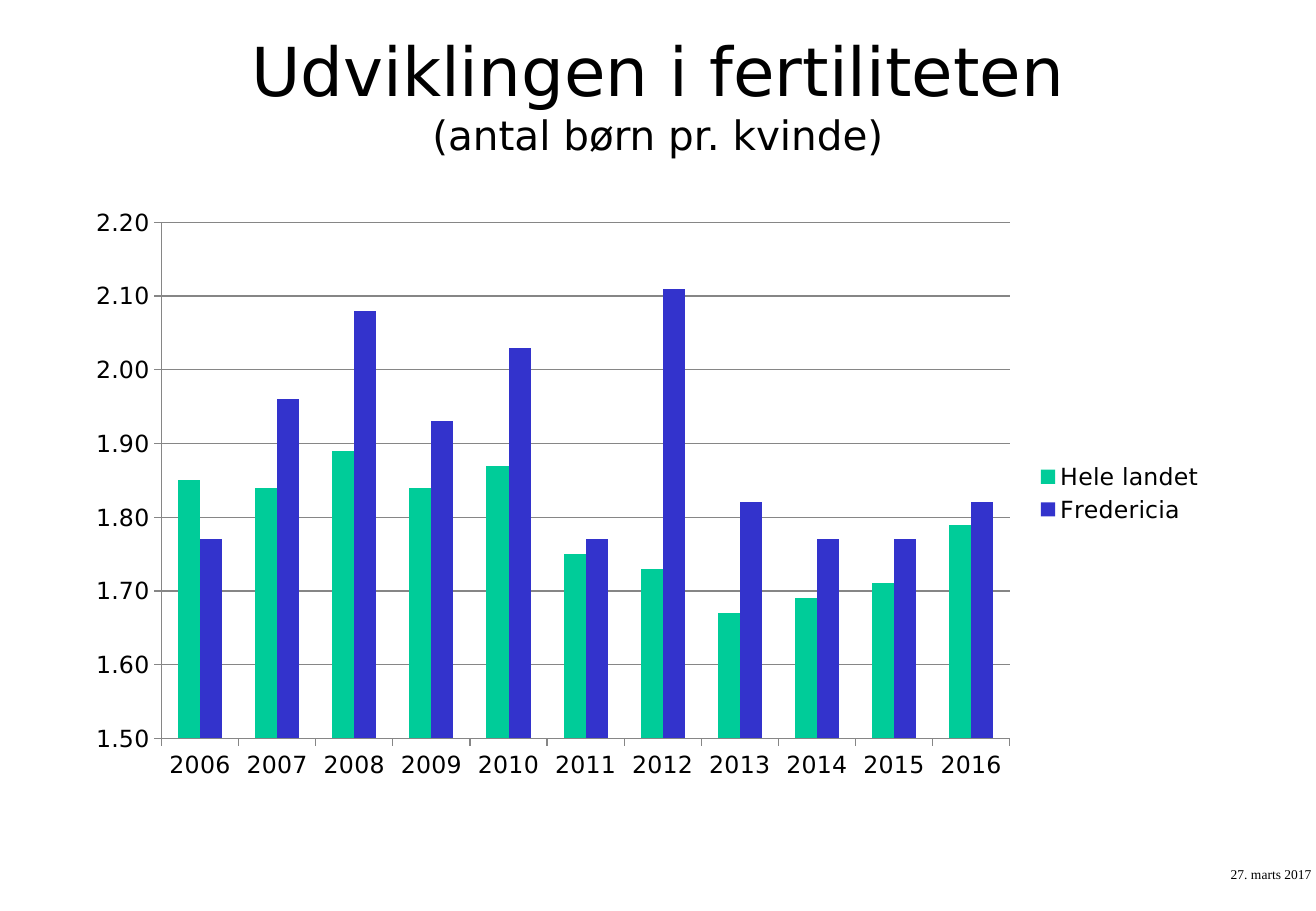
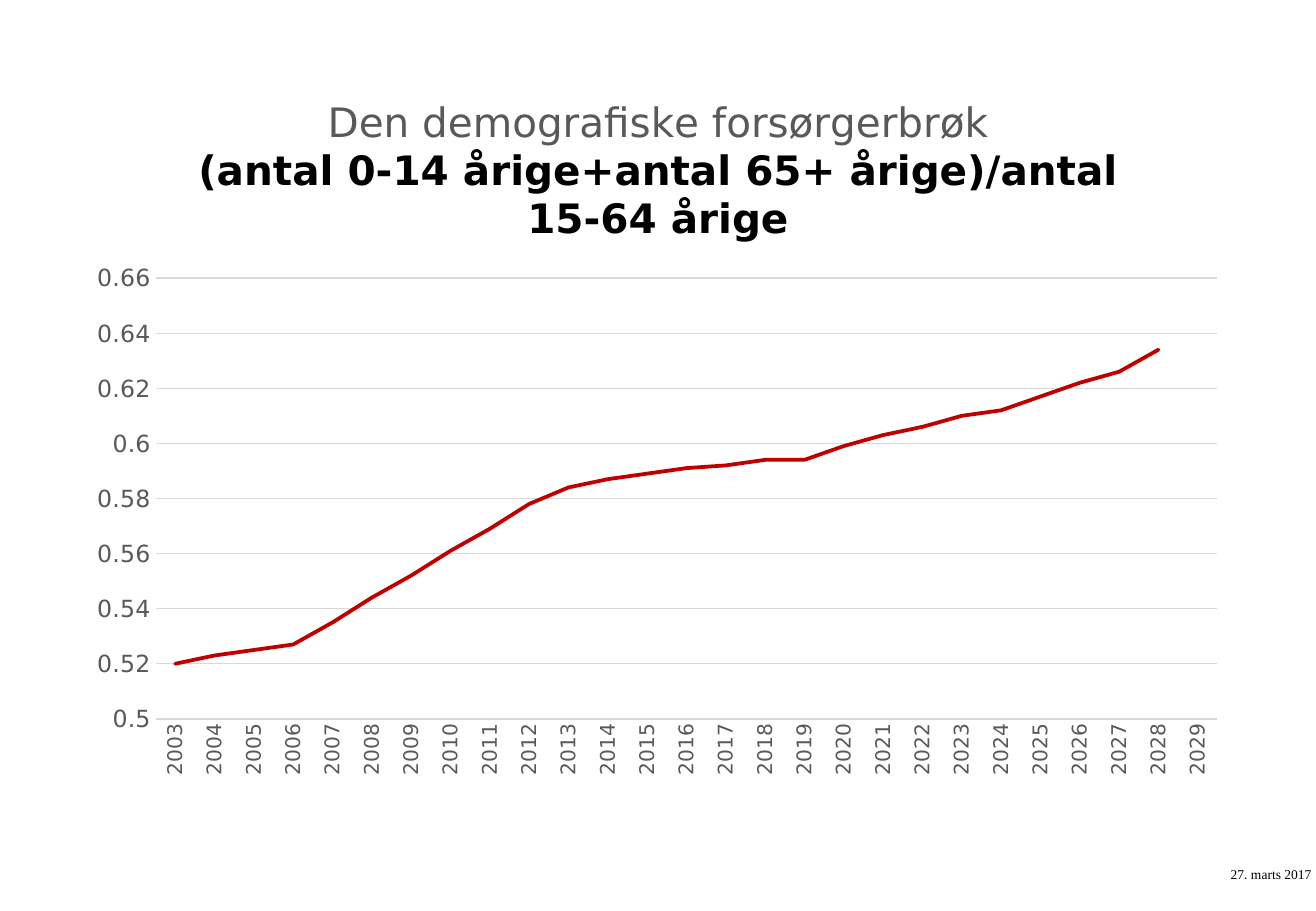
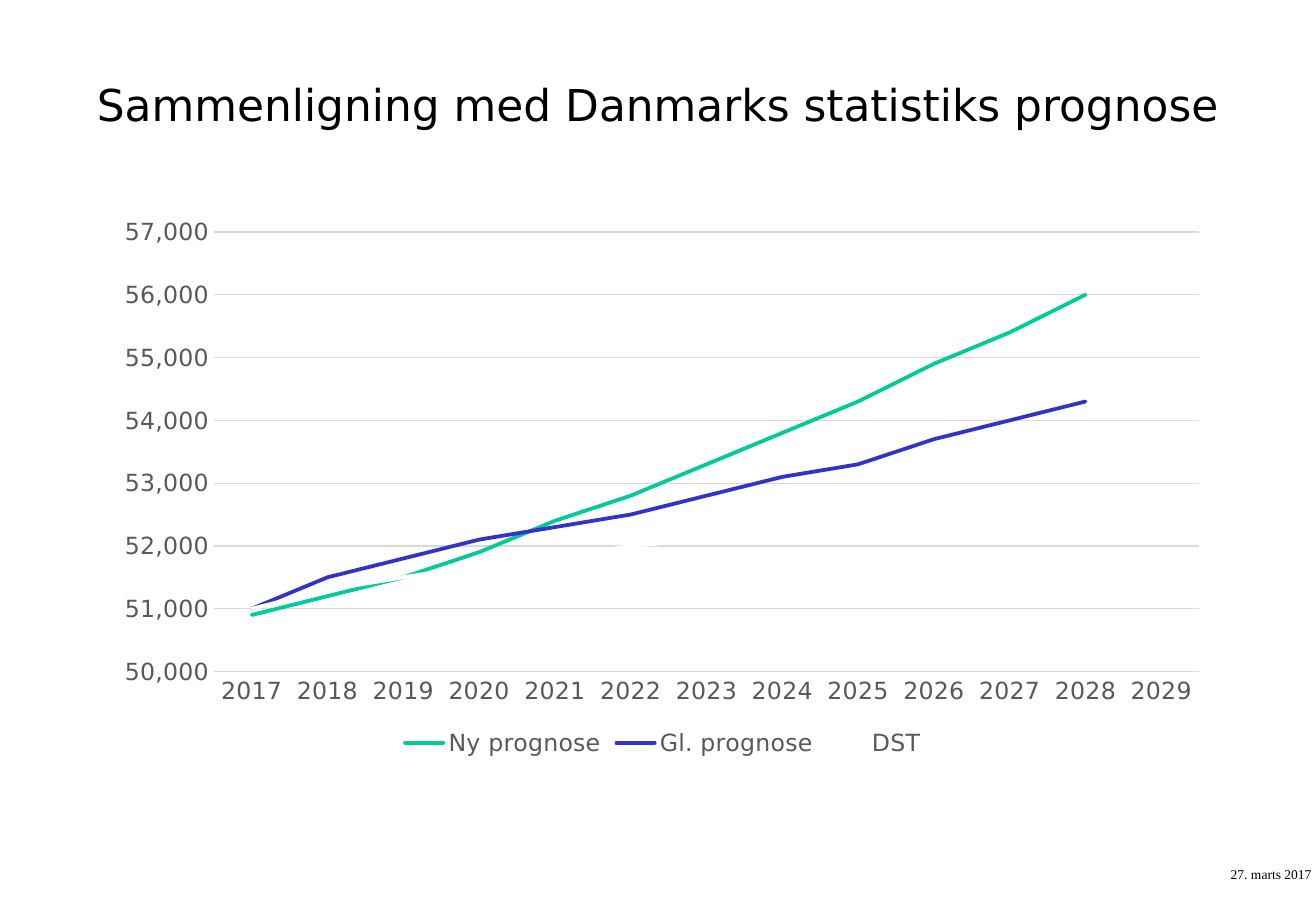
from lxml import etree
from pptx import Presentation
from pptx.chart.data import CategoryChartData
from pptx.dml.color import RGBColor
from pptx.enum.chart import XL_CHART_TYPE, XL_LEGEND_POSITION, XL_TICK_MARK
from pptx.enum.text import MSO_ANCHOR, PP_ALIGN
from pptx.oxml.ns import qn
from pptx.util import Inches, Pt

COLORS = {"black": "000000", "text": "595959", "grid": "D9D9D9", "axis": "868686",
          "green": "00CC99", "blue": "3333CC", "red": "C00000", "white": "FFFFFF"}
FONT = "DejaVu Sans"
FOOTER = "27. marts 2017"

# Content: boxes and plot areas are left, top, width, height in inches on the slide
SLIDES = [
    {"title": [("Udviklingen i fertiliteten", 40), ("(antal børn pr. kvinde)", 24)],
     "title_box": (0.81, 0.23, 9.21, 1.09),
     "type": XL_CHART_TYPE.COLUMN_CLUSTERED,
     "box": (0.61, 1.62, 9.4, 4.88), "plot": (1.33, 1.83, 6.98, 4.25),
     "years": range(2006, 2017), "scale": (1500, 2200, 100), "format": "#,##0.00,",
     "text": "black", "grid": "axis", "tick": XL_TICK_MARK.OUTSIDE,
     "legend": XL_LEGEND_POSITION.RIGHT,
     "series": [
         ("Hele landet", "green",
          [1850, 1840, 1890, 1840, 1870, 1750, 1730, 1670, 1690, 1710, 1790]),
         ("Fredericia", "blue",
          [1770, 1960, 2080, 1930, 2030, 1770, 2110, 1820, 1770, 1770, 1820])]},
    {"chart_title": [("Den demografiske forsørgerbrøk", "text", False),
                     ("(antal 0-14 årige+antal 65+ årige)/antal 15-64 årige", "black", True)],
     "type": XL_CHART_TYPE.LINE,
     "box": (0.61, 0.6, 9.61, 5.91), "plot": (1.28, 2.29, 8.74, 3.63),
     "years": range(2003, 2030), "scale": (0.5, 0.66, 0.02), "format": "General",
     "text": "text", "grid": "grid", "tick": XL_TICK_MARK.NONE,
     "year_size": 12, "year_rotation": -90,
     "series": [
         ("Forsørgerbrøk", "red",
          [0.52, 0.523, 0.525, 0.527, 0.535, 0.544, 0.552, 0.561, 0.569, 0.578, 0.584,
           0.587, 0.589, 0.591, 0.592, 0.594, 0.594, 0.599, 0.603, 0.606, 0.61, 0.612,
           0.617, 0.622, 0.626, 0.634, None])]},
    {"title": [("Sammenligning med Danmarks statistiks prognose", 26)],
     "title_box": (0.34, 0.23, 10.16, 1.25),
     "type": XL_CHART_TYPE.LINE,
     "box": (0.85, 1.7, 9.21, 4.57), "plot": (1.76, 1.91, 8.11, 3.62),
     "years": range(2017, 2030), "scale": (50000, 57000, 1000), "format": "#,##0",
     "text": "text", "grid": "grid", "tick": XL_TICK_MARK.NONE,
     "legend": XL_LEGEND_POSITION.BOTTOM,
     "series": [
         ("Ny prognose", "green", [50900, 51200, 51500, 51900, 52400, 52800, 53300,
                                   53800, 54300, 54900, 55400, 56000, None]),
         ("Gl. prognose", "blue", [51000, 51500, 51800, 52100, 52300, 52500, 52800,
                                   53100, 53300, 53700, 54000, 54300, None]),
         ("DST", "white", [51000, 51300, 51500, 51700, 51800, 52000, 52100,
                           52300, 52400, 52600, 52700, 52900, None])]},
]


def rgb(name):
    return RGBColor.from_string(COLORS[name])


def set_font(font, size, color="black", name=FONT, bold=False):
    for key, value in {"size": Pt(size), "name": name, "bold": bold}.items():
        setattr(font, key, value)
    font.color.rgb = rgb(color)


def set_line(line, color, width=0.75):
    line.color.rgb = rgb(color)
    line.width = Pt(width)


def add_text(s, box, lines, align=PP_ALIGN.LEFT, anchor=MSO_ANCHOR.TOP, name=FONT):
    """One paragraph whose lines each have their own size."""
    tf = s.shapes.add_textbox(*map(Inches, box)).text_frame
    tf.word_wrap = True
    tf.vertical_anchor = anchor
    p = tf.paragraphs[0]
    p.alignment = align
    for i, (text, size) in enumerate(lines):
        if i:
            p.add_line_break()
        r = p.add_run()
        r.text = text
        set_font(r.font, size, name=name)


def place_plot(chart, box, plot):
    """Fix the inner plot area as fractions of the chart box."""
    area = chart._chartSpace.chart.plotArea
    for old in area.findall(qn("c:layout")):
        area.remove(old)
    layout = etree.Element(qn("c:layout"))
    area.insert(0, layout)
    manual = etree.SubElement(layout, qn("c:manualLayout"))
    left, top, width, height = box
    values = {"layoutTarget": "inner", "xMode": "edge", "yMode": "edge",
              "x": (plot[0] - left) / width, "y": (plot[1] - top) / height,
              "w": plot[2] / width, "h": plot[3] / height}
    for tag, value in values.items():
        etree.SubElement(manual, qn(f"c:{tag}")).set("val", str(value))


def style_axes(chart, d):
    years, values = chart.category_axis, chart.value_axis
    for axis, size in ((years, d.get("year_size", 14)), (values, 14)):
        axis.major_tick_mark = d["tick"]
        axis.minor_tick_mark = XL_TICK_MARK.NONE
        set_font(axis.tick_labels.font, size, d["text"])
        set_line(axis.format.line, d["grid"])
    if d["tick"] == XL_TICK_MARK.NONE:
        values.format.line.fill.background()
    if "year_rotation" in d:
        body = years._element.find(qn("c:txPr")).find(qn("a:bodyPr"))
        body.set("rot", str(d["year_rotation"] * 60000))
        body.set("vert", "horz")
    values.minimum_scale, values.maximum_scale, values.major_unit = d["scale"]
    values.tick_labels.number_format = d["format"]
    values.tick_labels.number_format_is_linked = False
    values.has_major_gridlines = True
    set_line(values.major_gridlines.format.line, d["grid"])


def add_chart(s, d):
    data = CategoryChartData()
    data.categories = [str(year) for year in d["years"]]
    for name, _, values in d["series"]:
        data.add_series(name, values)
    chart = s.shapes.add_chart(d["type"], *map(Inches, d["box"]), data).chart
    set_font(chart.font, 10)

    # Series
    plot = chart.plots[0]
    plot.vary_by_categories = False
    is_line = d["type"] == XL_CHART_TYPE.LINE
    if not is_line:
        plot.gap_width = 150
    for series, (_, color, _) in zip(plot.series, d["series"]):
        if is_line:
            series.smooth = False
            set_line(series.format.line, color, 2.25)
            series.format.line._get_or_add_ln().set("cap", "rnd")
        else:
            series.format.fill.solid()
            series.format.fill.fore_color.rgb = rgb(color)

    # Title and legend
    chart.has_title = "chart_title" in d
    if chart.has_title:
        tf = chart.chart_title.text_frame
        for i, (text, color, bold) in enumerate(d["chart_title"]):
            p = tf.add_paragraph() if i else tf.paragraphs[0]
            r = p.add_run()
            r.text = text
            set_font(r.font, 24, color, bold=bold)
    chart.has_legend = "legend" in d
    if chart.has_legend:
        chart.legend.position = d["legend"]
        chart.legend.include_in_layout = False
        set_font(chart.legend.font, 14, d["text"])

    style_axes(chart, d)
    place_plot(chart, d["box"], d["plot"])


def main():
    prs = Presentation()
    prs.slide_width, prs.slide_height = Inches(10.83), Inches(7.5)
    for d in SLIDES:
        s = prs.slides.add_slide(prs.slide_layouts[6])
        add_text(s, (10.03, 7.08, 1.53, 0.23), [(FOOTER, 8)], name="Times New Roman")
        if "title" in d:
            add_text(s, d["title_box"], d["title"], PP_ALIGN.CENTER, MSO_ANCHOR.MIDDLE)
        add_chart(s, d)
    prs.save("out.pptx")


if __name__ == "__main__":
    main()
